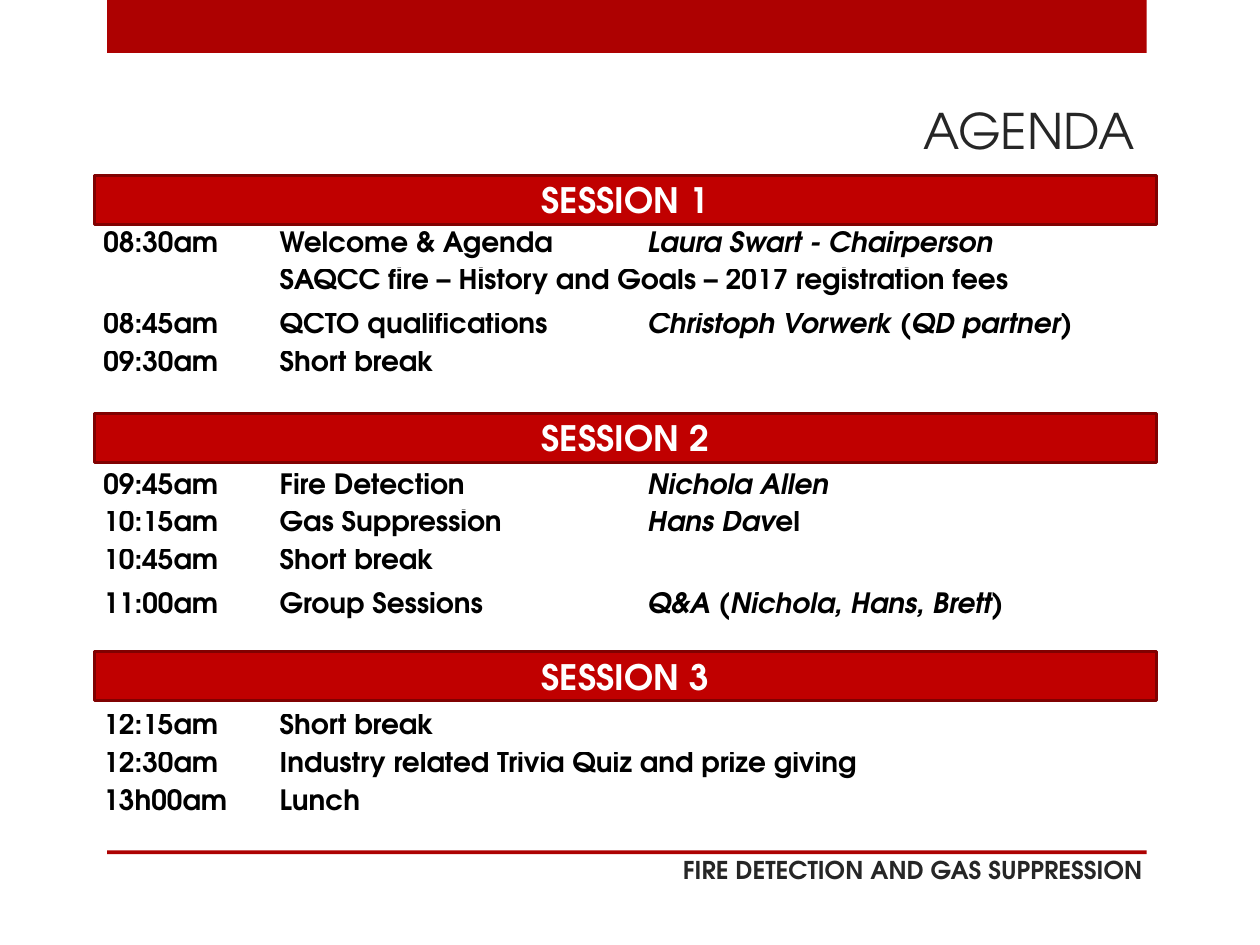
import pptx
import pptx.dml.color
import pptx.enum.shapes
import pptx.enum.text
import pptx.util
from dataclasses import dataclass
from lxml import etree

Inches = pptx.util.Inches
Pt = pptx.util.Pt
RGB = pptx.dml.color.RGBColor.from_string
ALIGN = pptx.enum.text.PP_ALIGN
ANCHOR = pptx.enum.text.MSO_ANCHOR


@dataclass(frozen=True)
class Theme:
    font: str = "TeX Gyre Adventor"
    accent: str = "AD0101"
    bar: str = "C00000"
    bar_line: str = "800101"
    heading: str = "262626"
    body: str = "000000"
    light: str = "FFFFFF"
    title_size: int = 28
    bar_size: int = 20
    body_size: int = 16
    footer_size: int = 14


THEME = Theme()
LEFT, BAR_WIDTH, BAR_HEIGHT, ROW_HEIGHT = 0.75, 8.43, 0.39, 0.3

# Each row holds time, topic and speaker; a speaker is a list of (text, italic).
# A topic without a speaker column entry of its own may span to the right edge.
SESSIONS = [
    ("SESSION 1", 1.39, 1.83, [1.4, 2.92, 4.11], [
        ("08:30am", "Welcome & Agenda", [("Laura Swart - Chairperson", True)]),
        ("", "SAQCC fire – History and Goals – 2017 registration fees", None),
        ("08:45am", "QCTO qualifications",
         [("Christoph Vorwerk (QD partner", True), (")", False)]),
        ("09:30am", "Short break", ""),
    ]),
    ("SESSION 2", 3.28, 3.75, [1.4, 2.92, 4.12], [
        ("09:45am", "Fire Detection", [("Nichola Allen", True)]),
        ("10:15am", "Gas Suppression", [("Hans Dav", True), ("el", False)]),
        ("10:45am", "Short break", ""),
        ("11:00am", "Group Sessions", [("Q&A (Nichola, Hans, Brett)", True)]),
    ]),
    ("SESSION 3", 5.17, 5.66, [1.4, 7.06], [
        ("12:15am", "Short break"),
        ("12:30am", "Industry related Trivia Quiz and prize giving"),
        ("13h00am", "Lunch"),
    ]),
]


def style(p, size, color, bold=False, align=ALIGN.LEFT):
    p.alignment = align
    p.font.name = THEME.font
    p.font.size = Pt(size)
    p.font.bold = bold
    p.font.color.rgb = RGB(color)


def add_rect(s, left, top, width, height, fill, line=None):
    sp = s.shapes.add_shape(
        pptx.enum.shapes.MSO_SHAPE.RECTANGLE,
        Inches(left), Inches(top), Inches(width), Inches(height))
    sp.shadow.inherit = False
    sp.fill.solid()
    sp.fill.fore_color.rgb = RGB(fill)
    if line:
        sp.line.color.rgb = RGB(line)
        sp.line.width = Pt(1.75)
    else:
        sp.line.fill.background()
    return sp


def add_label(s, left, top, width, height, text, size, bold=False):
    tf = s.shapes.add_textbox(
        Inches(left), Inches(top), Inches(width), Inches(height)).text_frame
    tf.word_wrap = True
    p = tf.paragraphs[0]
    p.add_run().text = text
    style(p, size, THEME.heading, bold, ALIGN.RIGHT)


def add_session_bar(s, top, text):
    sp = add_rect(s, LEFT, top, BAR_WIDTH, BAR_HEIGHT, THEME.bar, THEME.bar_line)
    tf = sp.text_frame
    tf.vertical_anchor = ANCHOR.MIDDLE
    p = tf.paragraphs[0]
    p.add_run().text = text
    style(p, THEME.bar_size, THEME.light, True, ALIGN.CENTER)


def fill_cell(cell, content):
    cell.fill.background()
    cell.margin_left = cell.margin_right = Inches(0.07)
    cell.margin_top = cell.margin_bottom = Inches(0.04)
    p = cell.text_frame.paragraphs[0]
    p.line_spacing = 0.8
    style(p, THEME.body_size, THEME.body, True)
    if not content:
        # Keep an empty cell as low as the text rows
        end = etree.SubElement(p._p, pptx.oxml.ns.qn("a:endParaRPr"))
        end.set("sz", str(THEME.body_size * 100))
        return
    for text, italic in [(content, False)] if isinstance(content, str) else content:
        r = p.add_run()
        r.text = text
        if italic:
            r.font.italic = True


def add_schedule(s, top, widths, rows):
    table = s.shapes.add_table(
        len(rows), len(widths), Inches(LEFT), Inches(top),
        Inches(sum(widths)), Inches(ROW_HEIGHT * len(rows))).table
    table.first_row = table.horz_banding = False
    for column, width in zip(table.columns, widths):
        column.width = Inches(width)
    for i, row in enumerate(rows):
        table.rows[i].height = Inches(ROW_HEIGHT)
        for j, content in enumerate(row):
            fill_cell(table.cell(i, j), content)
        if row[-1] is None:
            table.cell(i, 1).merge(table.cell(i, len(widths) - 1))


def main():
    prs = pptx.Presentation()
    prs.slide_width, prs.slide_height = Inches(10), Inches(7.5)
    s = prs.slides.add_slide(prs.slide_layouts[6])

    # Frame: top band, footer rule and footer text
    add_rect(s, 0.85, 0, 8.25, 0.42, THEME.accent)
    add_rect(s, 0.85, 6.75, 8.25, 0.03, THEME.accent)
    add_label(s, 0.67, 6.74, 8.5, 0.4, "FIRE DETECTION AND GAS SUPPRESSION",
              THEME.footer_size, True)

    # Title
    add_label(s, 0.83, 0.75, 8.27, 0.9, "AGENDA", THEME.title_size)

    # Sessions
    for name, bar_top, table_top, widths, rows in SESSIONS:
        add_schedule(s, table_top, widths, rows)
        add_session_bar(s, bar_top, name)

    prs.save("out.pptx")


if __name__ == "__main__":
    main()
